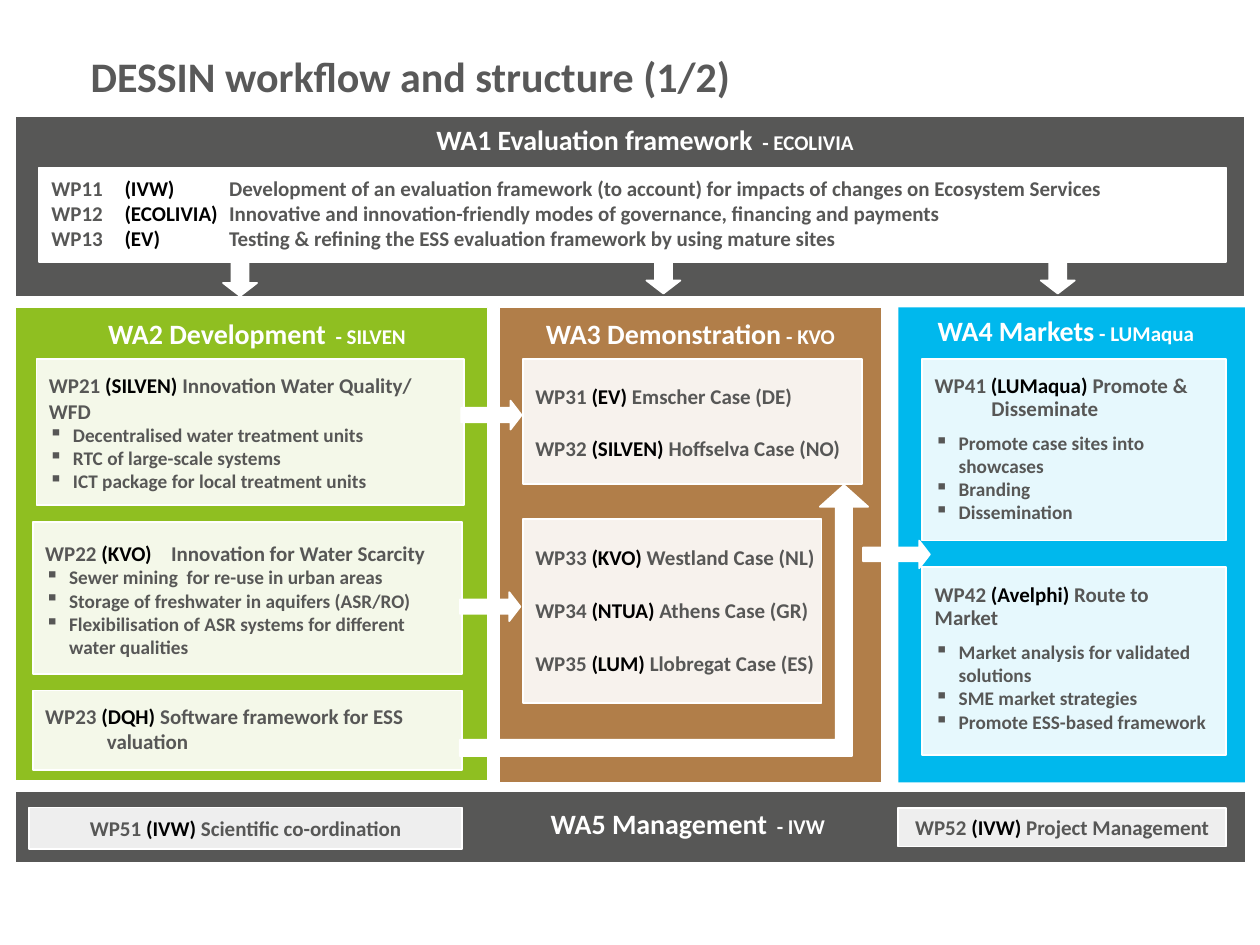
from lxml.etree import SubElement
from pptx import Presentation
from pptx.dml.color import RGBColor
from pptx.enum.shapes import MSO_SHAPE as SHAPE
from pptx.enum.text import MSO_ANCHOR as ANCHOR, PP_ALIGN as ALIGN
from pptx.oxml.ns import qn
from pptx.util import Inches, Pt

WHITE, BLACK, GREY, TITLE_GREY = "FFFFFF", "000000", "575756", "595959"
GREEN, BROWN, BLUE = "8FBF21", "B17E49", "00B8ED"

TITLE = ("DESSIN workflow and structure (1/2)", (0.62, 0.35, 5.55, 0.5))

# panel, fill, outlined, heading, lead partner, heading place
AREAS = [
    ((0.12, 2.44, 3.75, 3.76), GREEN, True, "WA2 Development", "  - SILVEN", (0.54, 2.46, 3.0, 0.37)),
    ((3.96, 2.44, 3.04, 3.77), BROWN, True, " WA3 Demonstration", " - KVO", (3.77, 2.46, 3.37, 0.37)),
    ((7.13, 2.44, 2.75, 3.77), BLUE, False, "WA4 Markets", " - LUMaqua", (7.13, 2.44, 2.66, 0.37)),
    ((0.12, 0.92, 9.76, 1.44), GREY, True, "WA1 Evaluation framework", "  - ECOLIVIA", (3.12, 0.92, 4.0, 0.37)),
    ((0.12, 6.28, 9.77, 0.57), GREY, True, "WA5 Management", "  - IVW", (3.96, 6.35, 3.0, 0.37)),
]

FRAMEWORK_BOX = (0.31, 1.33, 9.42, 0.75)
FRAMEWORK = [
    ("WP11", "IVW", "Development of an evaluation framework (to account) for impacts of changes on Ecosystem Services"),
    ("WP12", "ECOLIVIA", "Innovative and innovation-friendly modes of governance, financing and payments"),
    ("WP13", "EV", "Testing & refining the ESS evaluation framework by using mature sites"),
]

# box, top of text, heading, bullets, heading format
PACKAGES = [
    ((0.29, 2.85, 3.39, 1.16), 2.96, ("WP21", "SILVEN", "Innovation Water Quality/ WFD"),
     ["Decentralised water treatment units", "RTC of large-scale systems",
      "ICT package for local treatment units"], {}),
    ((0.26, 4.14, 3.41, 1.21), 4.29, ("WP22", "KVO", "\tInnovation for Water Scarcity"),
     ["Sewer mining  for re-use in urban areas", "Storage of freshwater in aquifers (ASR/RO)",
      "Flexibilisation of ASR systems for different water qualities"], {"tabs": [1.0]}),
    ((0.26, 5.48, 3.41, 0.63), 5.58, ("WP23", "DQH", "Software framework for ESS\nvaluation"),
     [], {"hang": 0.49}),
    ((7.32, 2.85, 2.41, 1.44), 2.98, ("WP41", "LUMaqua", "Promote &\nDisseminate"),
     ["Promote case sites into showcases", "Branding", "Dissemination"],
     {"hang": 0.45, "line_spacing": 0.9, "space_after": Pt(6)}),
    ((7.32, 4.5, 2.41, 1.49), 4.64, ("WP42", "Avelphi", "Route to Market"),
     ["Market analysis for validated solutions", "SME market strategies",
      "Promote ESS-based framework"], {"line_spacing": 0.9, "space_after": Pt(6)}),
]

# box, top of first case, text width, cases
CASE_STEP = 0.42
CASE_GROUPS = [
    ((4.15, 2.85, 2.69, 0.99), 3.04, 2.7,
     [("WP31", "EV", "Emscher Case (DE)"), ("WP32", "SILVEN", "Hoffselva Case (NO)")]),
    ((4.15, 4.12, 2.37, 1.46), 4.32, 2.54,
     [("WP33", "KVO", "Westland Case (NL)"), ("WP34", "NTUA", "Athens Case (GR)"),
      ("WP35", "LUM", "Llobregat Case (ES)")]),
]

MANAGEMENT = [
    ((0.23, 6.41, 3.44, 0.33), ("WP51", "IVW", "Scientific co-ordination")),
    ((7.13, 6.41, 2.6, 0.31), ("WP52", "IVW", "Project Management")),
]

FLOW_ARROWS = [(3.65, 4.7, 0.48, 0.23), (3.66, 3.18, 0.48, 0.23), (6.85, 4.29, 0.53, 0.22)]
DOWN_ARROWS = [(1.77, 2.08), (5.13, 2.06), (8.26, 2.06)]
DOWN_SIZE = 0.27
ARROW_ADJ = (0.5, 0.384)
BENT_ARROW, BENT_ADJ = (3.65, 3.85, 3.24, 2.15), (0.06, 0.089, 0.08)


def rgb(color):
    return RGBColor.from_string(color)


def add_block(slide, place, fill=WHITE, kind=SHAPE.RECTANGLE, opacity=100, outlined=True, adj=()):
    block = slide.shapes.add_shape(kind, *map(Inches, place))
    block.shadow.inherit = False
    block.fill.solid()
    block.fill.fore_color.rgb = rgb(fill)
    if opacity < 100:
        color = block.fill._xPr.find(qn("a:solidFill"))[0]
        SubElement(color, qn("a:alpha"), val=str(opacity * 1000))
    if outlined:
        block.line.color.rgb = rgb(WHITE)
        block.line.width = Pt(1)
    else:
        block.line.fill.background()
    for i, value in enumerate(adj):
        block.adjustments[i] = value
    return block


def add_text(slide, place, wrap=True, tight=False):
    frame = slide.shapes.add_textbox(*map(Inches, place)).text_frame
    frame.word_wrap = wrap
    if tight:
        frame.margin_top = 0
    return frame


def add_run(paragraph, text, size, color):
    """Add bold text, turning newlines into line breaks."""
    for i, line in enumerate(text.split("\n")):
        if i:
            paragraph.add_line_break()
        run = paragraph.add_run()
        run.text = line
        for key, value in {"name": "Calibri", "size": Pt(size), "bold": True}.items():
            setattr(run.font, key, value)
        run.font.color.rgb = rgb(color)


def next_paragraph(frame):
    first = frame.paragraphs[0]
    return frame.add_paragraph() if first.runs else first


def set_hang(paragraph, inches):
    props = paragraph._p.get_or_add_pPr()
    props.set("marL", str(Inches(inches)))
    props.set("indent", str(-Inches(inches)))
    return props


def add_package(frame, package, gap=" ", tabs=(), hang=0, **layout):
    """Write a package as code, partner in black, then its title."""
    code, partner, title = package
    paragraph = next_paragraph(frame)
    if hang:
        set_hang(paragraph, hang)
    if tabs:
        stops = SubElement(paragraph._p.get_or_add_pPr(), qn("a:tabLst"))
        for tab in tabs:
            SubElement(stops, qn("a:tab"), pos=str(Inches(tab)), algn="l")
    for key, value in layout.items():
        setattr(paragraph, key, value)
    add_run(paragraph, code + gap, 12, GREY)
    add_run(paragraph, f"({partner}){gap}", 12, BLACK)
    add_run(paragraph, title, 12, GREY)


def add_bullet(frame, text):
    paragraph = next_paragraph(frame)
    SubElement(set_hang(paragraph, 0.19), qn("a:buChar"), char="▪")
    add_run(paragraph, text, 11, GREY)


def main():
    deck = Presentation()
    deck.slide_width, deck.slide_height = Inches(10), Inches(7.5)
    slide = deck.slides.add_slide(deck.slide_layouts[6])

    for panel, fill, outlined, heading, lead, place in AREAS:
        add_block(slide, panel, fill, outlined=outlined)
        paragraph = add_text(slide, place, wrap=False).paragraphs[0]
        paragraph.alignment = ALIGN.CENTER
        add_run(paragraph, heading, 16, WHITE)
        add_run(paragraph, lead, 12, WHITE)

    add_block(slide, FRAMEWORK_BOX)
    left, top, width, _ = FRAMEWORK_BOX
    frame = add_text(slide, (left, top + 0.06, width, 0.66), tight=True)
    for package in FRAMEWORK:
        add_package(frame, package, gap="\t", tabs=[0.58, 1.41])

    for box, text_top, package, bullets, layout in PACKAGES:
        add_block(slide, box, opacity=90)
        left, top, width, height = box
        frame = add_text(slide, (left, text_top, width, top + height - text_top), tight=True)
        add_package(frame, package, **layout)
        for bullet in bullets:
            add_bullet(frame, bullet)

    for box, first_top, width, cases in CASE_GROUPS:
        add_block(slide, box, opacity=90)
        for i, case in enumerate(cases):
            place = (box[0], first_top + i * CASE_STEP, width, 0.25)
            add_package(add_text(slide, place, tight=True), case)

    for box, package in MANAGEMENT:
        frame = add_block(slide, box, opacity=90).text_frame
        frame.word_wrap = False
        frame.vertical_anchor = ANCHOR.MIDDLE
        add_package(frame, package, alignment=ALIGN.CENTER)

    for place in FLOW_ARROWS:
        add_block(slide, place, kind=SHAPE.RIGHT_ARROW, adj=ARROW_ADJ)
    for place in DOWN_ARROWS:
        arrow = add_block(slide, (*place, DOWN_SIZE, DOWN_SIZE), kind=SHAPE.RIGHT_ARROW, adj=ARROW_ADJ)
        arrow.rotation = 90
    add_block(slide, BENT_ARROW, kind=SHAPE.BENT_UP_ARROW, adj=BENT_ADJ)

    title, place = TITLE
    add_run(add_text(slide, place).paragraphs[0], title, 24, TITLE_GREY)
    deck.save("out.pptx")


if __name__ == "__main__":
    main()
